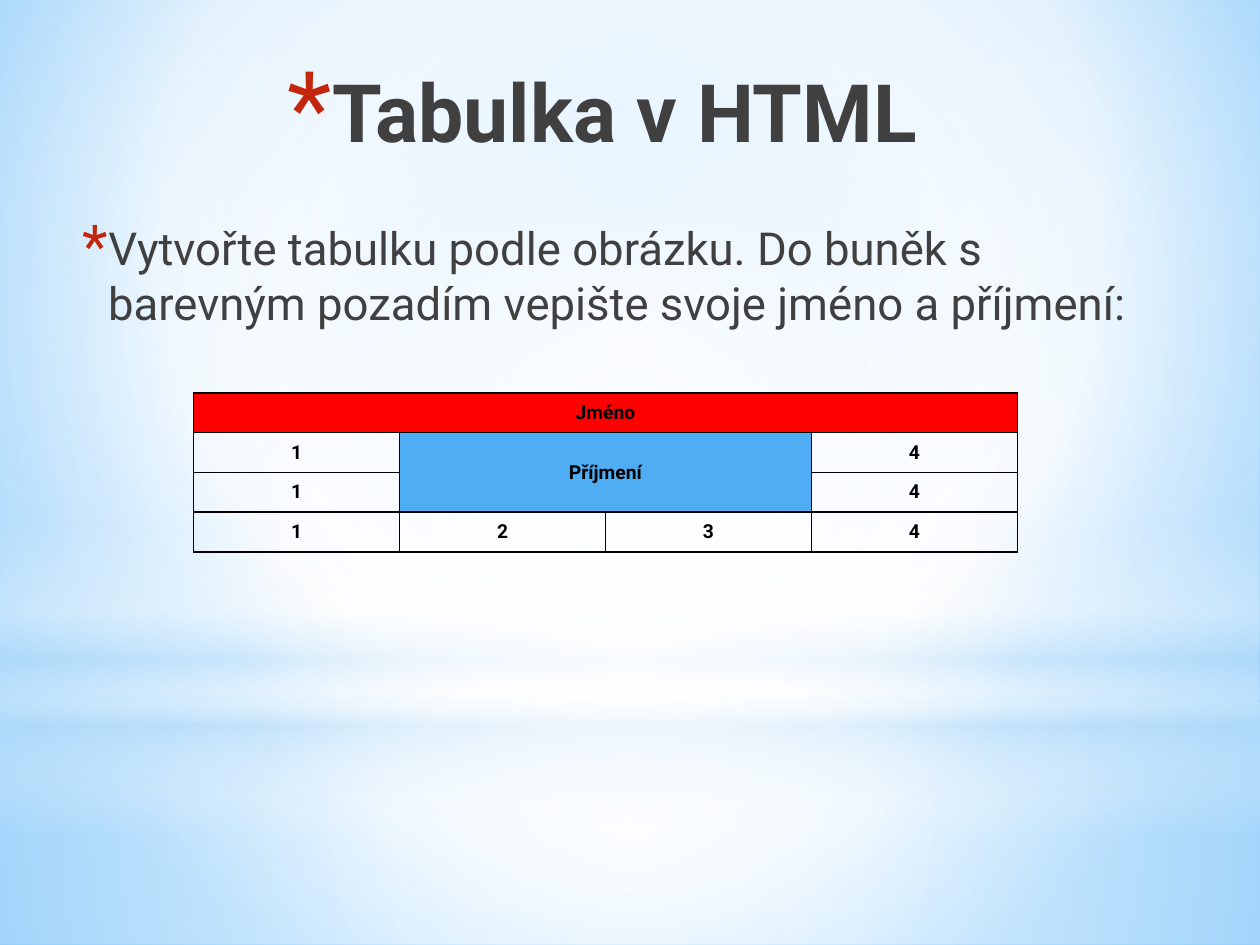
from lxml import etree
from pptx import Presentation
from pptx.dml.color import RGBColor
from pptx.enum.shapes import MSO_SHAPE
from pptx.enum.text import MSO_ANCHOR, PP_ALIGN
from pptx.oxml.ns import qn
from pptx.util import Pt

RECT, OVAL = MSO_SHAPE.RECTANGLE, MSO_SHAPE.OVAL
LEFT, CENTER = PP_ALIGN.LEFT, PP_ALIGN.CENTER
MIDDLE = MSO_ANCHOR.MIDDLE
FONT = "Roboto"
CENTRE_FOCUS = (50, 50, 50, 50)
SLIDE_W, SLIDE_H = 720, 540
HORIZON = 401.8

TABLE_ROWS = [
    ["Jméno", "", "", ""],
    ["1", "Příjmení", "", "4"],
    ["1", "", "", "4"],
    ["1", "2", "3", "4"],
]
CELL_FILLS = {(0, 0): "FF0000", (1, 1): "4FADF3"}
MERGES = [((0, 0), (0, 3)), ((1, 1), (2, 2))]
COLUMN_W, ROW_H = 117.7, 22.7


def rgb(color):
    return RGBColor.from_string(color)


def add_child(parent, tag, **attributes):
    child = etree.SubElement(parent, qn(tag))
    for name, value in attributes.items():
        child.set(name, str(value))
    return child


def set_gradient(fill, owner, stops, focus=None):
    """Stops are (position %, colour, opacity %); without a focus, it runs downwards."""
    fill.gradient()
    gradient = next(owner.iter(qn("a:gradFill")))
    for child in list(gradient):
        gradient.remove(child)
    stop_list = add_child(gradient, "a:gsLst")
    for position, color, opacity in stops:
        stop = add_child(stop_list, "a:gs", pos=position * 1000)
        tone = add_child(stop, "a:srgbClr", val=color)
        if opacity < 100:
            add_child(tone, "a:alpha", val=opacity * 1000)
    if focus:
        circle = add_child(gradient, "a:path", path="circle")
        sides = {side: share * 1000 for side, share in zip("ltrb", focus)}
        add_child(circle, "a:fillToRect", **sides)
    else:
        add_child(gradient, "a:lin", ang=90 * 60000, scaled=0)


def add_glow(slide, kind, top, height, stops, focus=None):
    glow = slide.shapes.add_shape(kind, 0, Pt(top), Pt(SLIDE_W), Pt(height))
    glow.shadow.inherit = False
    glow.line.fill.background()
    set_gradient(glow.fill, glow._element, stops, focus)


def write_text(frame, text, size, color, bold=False, align=LEFT):
    frame.word_wrap = True
    paragraph = frame.paragraphs[0]
    paragraph.alignment = align
    run = paragraph.add_run()
    run.text = text
    run.font.name = FONT
    run.font.size = Pt(size)
    run.font.bold = bold
    run.font.color.rgb = rgb(color)
    return paragraph


def add_bullet(paragraph, margin, hanging, scale):
    properties = paragraph._p.get_or_add_pPr()
    properties.set("marL", str(Pt(margin)))
    properties.set("indent", str(-Pt(hanging)))
    bullet_color = add_child(properties, "a:buClr")
    add_child(bullet_color, "a:srgbClr", val="C3260C")
    add_child(properties, "a:buSzPct", val=scale * 1000)
    add_child(properties, "a:buFont", typeface=FONT)
    add_child(properties, "a:buChar", char="*")


def add_bulleted_text(slide, box, text, margin, hanging, scale, **text_format):
    frame = slide.shapes.add_textbox(*map(Pt, box)).text_frame
    paragraph = write_text(frame, text, **text_format)
    add_bullet(paragraph, margin, hanging, scale)


def set_borders(cell, color="000000", width=1):
    properties = cell._tc.get_or_add_tcPr()
    for index, side in enumerate(("a:lnL", "a:lnR", "a:lnT", "a:lnB")):
        border = etree.Element(qn(side), w=str(Pt(width)))
        add_child(add_child(border, "a:solidFill"), "a:srgbClr", val=color)
        properties.insert(index, border)


def add_name_table(slide, left, top):
    row_count, column_count = len(TABLE_ROWS), len(TABLE_ROWS[0])
    table = slide.shapes.add_table(
        row_count, column_count, Pt(left), Pt(top),
        Pt(COLUMN_W * column_count), Pt(ROW_H * row_count)).table
    table.first_row = table.horz_banding = False
    for column in table.columns:
        column.width = Pt(COLUMN_W)
    for row in table.rows:
        row.height = Pt(ROW_H)
    for r, labels in enumerate(TABLE_ROWS):
        for c, label in enumerate(labels):
            cell = table.cell(r, c)
            cell.vertical_anchor = MIDDLE
            cell.margin_left = cell.margin_right = Pt(5)
            cell.margin_top = cell.margin_bottom = 0
            if (r, c) in CELL_FILLS:
                cell.fill.solid()
                cell.fill.fore_color.rgb = rgb(CELL_FILLS[r, c])
            else:
                cell.fill.background()
            set_borders(cell)
            if label:
                write_text(cell.text_frame, label, size=11, color="000000",
                           bold=True, align=CENTER)
    for first, last in MERGES:
        table.cell(*first).merge(table.cell(*last))


def main():
    deck = Presentation()
    deck.slide_width, deck.slide_height = Pt(SLIDE_W), Pt(SLIDE_H)
    slide = deck.slides.add_slide(deck.slide_layouts[6])

    # Sky background and its layers of light
    set_gradient(slide.background.fill, slide._element,
                 [(0, "9ED5FF", 100), (60, "FFFFFF", 100), (100, "5BB9FF", 100)],
                 focus=(20, 10, 20, 60))
    add_glow(slide, RECT, HORIZON, SLIDE_H - HORIZON,
             [(0, "FFFFFF", 91), (37, "FFFFFF", 76), (100, "B4DCFA", 79)], CENTRE_FOCUS)
    add_glow(slide, RECT, 0, HORIZON,
             [(0, "FFFFFF", 89), (48, "FFFFFF", 62), (100, "B4DCFA", 79)], CENTRE_FOCUS)
    add_glow(slide, RECT, 296.6, 180,
             [(0, "FFFFFF", 0), (29, "FFFFFF", 30), (45, "B4DCFA", 40),
              (55, "FFFFFF", 26), (65, "B4DCFA", 60), (100, "FFFFFF", 0)])
    add_glow(slide, OVAL, 126, HORIZON,
             [(0, "FFFFFF", 100), (56, "FFFFFF", 0)], CENTRE_FOCUS)

    # Title and task
    add_bulleted_text(slide, (87.8, 31.7, 512.6, 90), "Tabulka v HTML",
                      margin=25.2, hanging=25.2, scale=128,
                      size=46, color="404040", bold=True, align=CENTER)
    add_bulleted_text(slide, (36.7, 122.4, 646.6, 385.2),
                      "Vytvořte tabulku podle obrázku. Do buněk s barevným pozadím "
                      "vepište svoje jméno a příjmení:",
                      margin=18, hanging=14.4, scale=130, size=26, color="404040")

    # Table to be rebuilt in HTML
    add_name_table(slide, left=110.6, top=224.6)

    deck.save("out.pptx")


if __name__ == "__main__":
    main()
